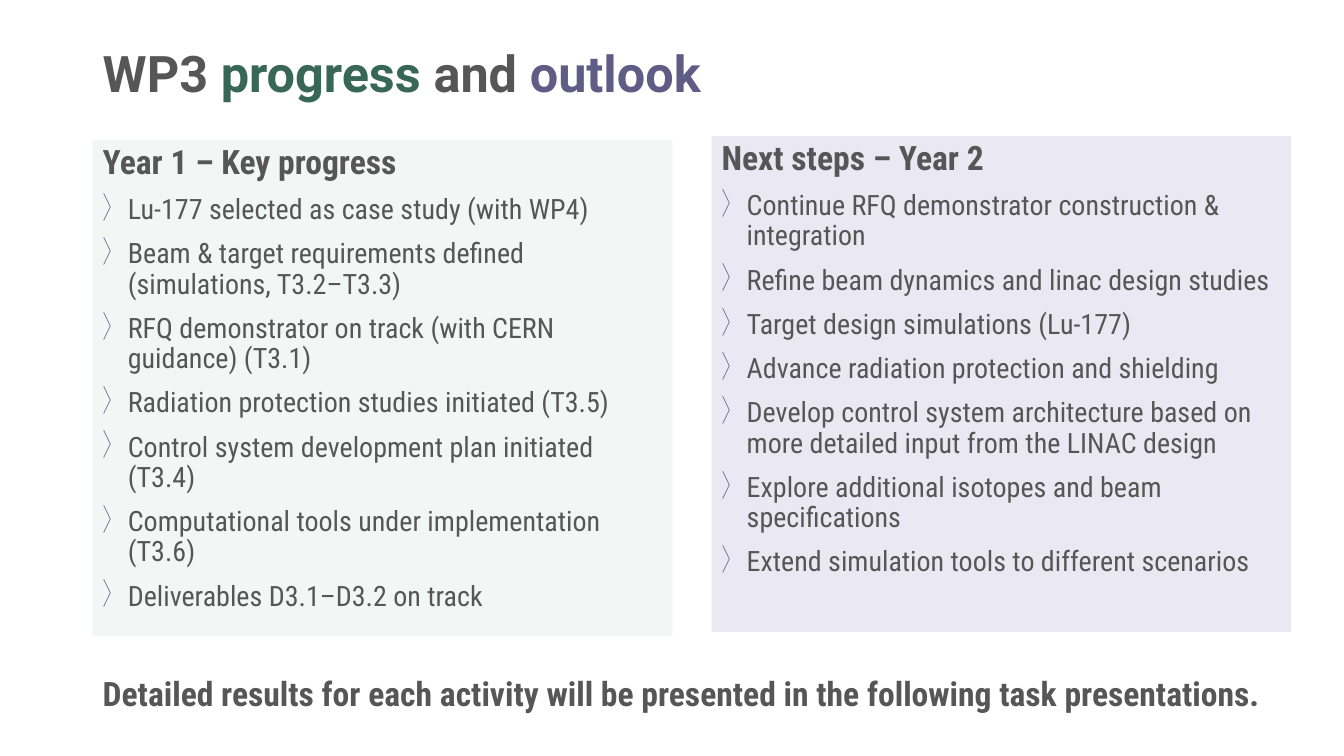
from lxml import etree
from pptx import Presentation
from pptx.dml.color import RGBColor
from pptx.enum.shapes import MSO_SHAPE
from pptx.enum.text import MSO_ANCHOR, PP_ALIGN
from pptx.oxml.ns import qn
from pptx.util import Pt

RECTANGLE = MSO_SHAPE.RECTANGLE
TOP, MIDDLE = MSO_ANCHOR.TOP, MSO_ANCHOR.MIDDLE
LEFT = PP_ALIGN.LEFT

GREY = RGBColor(0x56, 0x56, 0x56)
GREEN = RGBColor(0x38, 0x67, 0x58)
PURPLE = RGBColor(0x5F, 0x5C, 0x85)
PALE_GREEN = RGBColor(0xE6, 0xF1, 0xEE)
PALE_PURPLE = RGBColor(0xD6, 0xD4, 0xE8)

MARGIN = 66.24
PANEL_WIDTH, PANEL_HEIGHT = 414, 354.24

PROGRESS = [
    "Lu-177 selected as case study (with WP4)",
    "Beam & target requirements defined (simulations, T3.2–T3.3)",
    "RFQ demonstrator on track (with CERN guidance) (T3.1)",
    "Radiation protection studies initiated (T3.5)",
    "Control system development plan initiated (T3.4)",
    "Computational tools under implementation (T3.6)",
    "Deliverables D3.1–D3.2 on track",
]
NEXT_STEPS = [
    "Continue RFQ demonstrator construction & integration",
    "Refine beam dynamics and linac design studies",
    "Target design simulations (Lu-177)",
    "Advance radiation protection and shielding",
    "Develop control system architecture based on more detailed input from the LINAC design",
    "Explore additional isotopes and beam specifications",
    "Extend simulation tools to different scenarios",
]


class SlideBuilder:
    title_font = "Roboto"
    body_font = "Roboto Condensed"
    title_size, heading_size, item_size = 36, 24, 20
    line_spacing = 0.9
    item_gap = 10
    indent = 18

    def __init__(self, slide):
        self.slide = slide

    def add_run(self, paragraph, text, size, color=GREY, bold=True, font=body_font):
        run = paragraph.add_run()
        run.text = text
        run.font.name = font
        run.font.size = Pt(size)
        run.font.bold = bold
        run.font.color.rgb = color

    def add_text_box(self, left, top, width, height, anchor=TOP):
        shape = self.slide.shapes.add_textbox(Pt(left), Pt(top), Pt(width), Pt(height))
        shape.text_frame.word_wrap = True
        shape.text_frame.vertical_anchor = anchor
        return shape.text_frame.paragraphs[0]

    def add_title(self, left, top, width, height, parts):
        paragraph = self.add_text_box(left, top, width, height, MIDDLE)
        paragraph.line_spacing = self.line_spacing
        for text, color in parts:
            self.add_run(paragraph, text, self.title_size, color, font=self.title_font)

    def add_statement(self, left, top, width, height, text):
        paragraph = self.add_text_box(left, top, width, height)
        self.add_run(paragraph, text, self.heading_size)

    def add_bullet(self, paragraph):
        properties = paragraph._p.get_or_add_pPr()
        properties.set("marL", str(Pt(self.indent)))
        properties.set("indent", str(-Pt(self.indent)))
        bullet_color = etree.SubElement(properties, qn("a:buClr"))
        etree.SubElement(bullet_color, qn("a:srgbClr"), val=str(PURPLE))
        etree.SubElement(properties, qn("a:buChar"), char="⟩")

    def add_panel(self, left, top, width, height, color, heading, items):
        shape = self.slide.shapes.add_shape(
            RECTANGLE, Pt(left), Pt(top), Pt(width), Pt(height))
        shape.shadow.inherit = False
        shape.line.fill.background()
        shape.fill.solid()
        shape.fill.fore_color.rgb = color
        fill_color = shape._element.spPr.find(".//" + qn("a:srgbClr"))
        etree.SubElement(fill_color, qn("a:alpha"), val="50000")

        frame = shape.text_frame
        frame.word_wrap = True
        frame.vertical_anchor = TOP
        paragraph = frame.paragraphs[0]
        paragraph.alignment = LEFT
        paragraph.line_spacing = self.line_spacing
        self.add_run(paragraph, heading, self.heading_size)
        for item in items:
            paragraph = frame.add_paragraph()
            self.add_bullet(paragraph)
            paragraph.alignment = LEFT
            paragraph.line_spacing = self.line_spacing
            paragraph.space_before = Pt(self.item_gap)
            self.add_run(paragraph, item, self.item_size, bold=False)


def main():
    presentation = Presentation()
    presentation.slide_width = Pt(960)
    presentation.slide_height = Pt(540)
    builder = SlideBuilder(presentation.slides.add_slide(presentation.slide_layouts[6]))

    builder.add_title(MARGIN, 20.88, 860.4, 67.68, [
        ("WP3", GREY), (" progress ", GREEN), ("and ", GREY), ("outlook", PURPLE)])
    builder.add_panel(MARGIN, 100.08, PANEL_WIDTH, PANEL_HEIGHT, PALE_GREEN,
                      "Year 1 – Key progress", PROGRESS)
    builder.add_panel(508.32, 97.2, PANEL_WIDTH, PANEL_HEIGHT, PALE_PURPLE,
                      "Next steps – Year 2", NEXT_STEPS)
    builder.add_statement(
        MARGIN, 477.36, 850.32, 36,
        "Detailed results for each activity will be presented in the following task presentations.")
    presentation.save("out.pptx")


if __name__ == "__main__":
    main()
